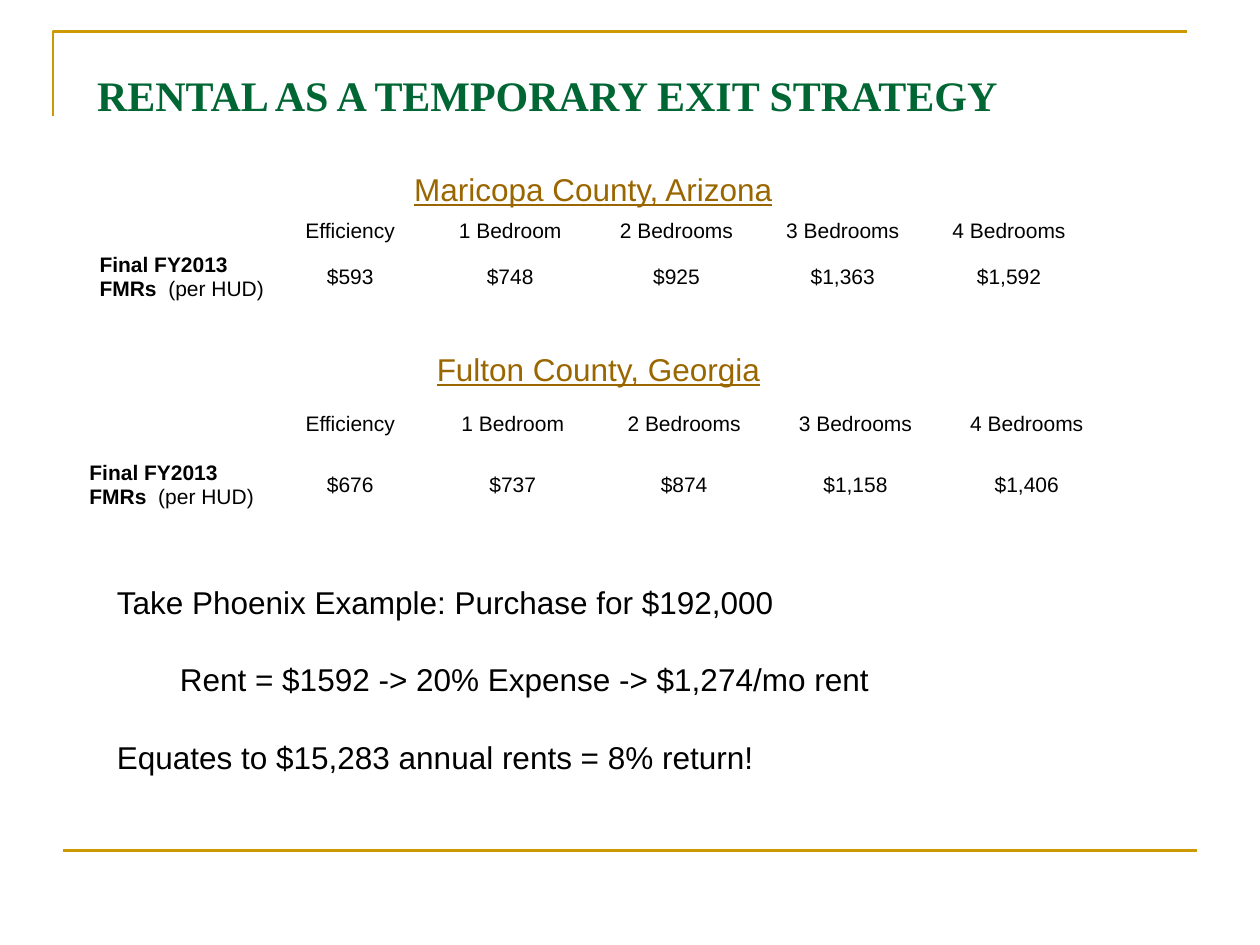
from lxml import etree
from pptx import Presentation
from pptx.dml.color import RGBColor
from pptx.enum import shapes, text
from pptx.oxml.ns import qn
from pptx.util import Inches, Pt

GOLD = RGBColor(0xCC, 0x99, 0x00)
BROWN = RGBColor(0x99, 0x66, 0x00)
GREEN = RGBColor(0x00, 0x66, 0x33)
BLACK = RGBColor(0, 0, 0)
WHITE = RGBColor(255, 255, 255)

HEAD = dict(name="Arial", size=Pt(18), underline=True)
SMALL = dict(name="Arial", size=Pt(12), bold=False)
BODY = dict(name="Arial", size=Pt(18))
TITLE = dict(name="Times New Roman", size=Pt(24), bold=True)

SIZES = ["Efficiency", "1 Bedroom", "2 Bedrooms", "3 Bedrooms", "4 Bedrooms"]
LABEL = [("Final FY2013 FMRs ", True), (" (per HUD)", False)]


def set_all(item, values):
    for key, value in values.items():
        setattr(item, key, value)


def add_run(para, words, style, color=BLACK):
    run = para.add_run()
    run.text = words
    set_all(run.font, style)
    run.font.color.rgb = color


def style_line(shape):
    shape.line.color.rgb = GOLD
    shape.line.width = Pt(1.5)


def add_frame(slide):
    """Draw the corner at the top left and the rule at the foot."""
    pen = slide.shapes.build_freeform(Inches(0.42), Inches(0.92))
    pen.add_line_segments([(Inches(0.42), Inches(0.25)),
                           (Inches(9.42), Inches(0.25))], close=False)
    corner = pen.convert_to_shape()
    corner.fill.background()
    corner.shadow.inherit = False
    style_line(corner)

    rule = slide.shapes.add_connector(
        shapes.MSO_CONNECTOR.STRAIGHT,
        Inches(0.5), Inches(6.75), Inches(9.5), Inches(6.75))
    style_line(rule)
    etree.SubElement(rule._element.spPr, qn("a:effectLst"))


def add_title(slide, words):
    title = slide.shapes.title
    set_all(title, dict(left=Inches(0.67), top=Inches(0.5),
                        width=Inches(8.5), height=Inches(0.83)))
    frame = title.text_frame
    frame.vertical_anchor = text.MSO_ANCHOR.TOP
    para = frame.paragraphs[0]
    para.alignment = text.PP_ALIGN.LEFT
    add_run(para, words, TITLE, GREEN)


def add_rents(slide, county, rents, left, top, cols, rows):
    """Add a county's table: a merged heading, unit sizes and rents."""
    table = slide.shapes.add_table(
        len(rows), len(cols), Inches(left), Inches(top),
        Inches(sum(cols)), Inches(sum(rows))).table
    table.first_row = table.horz_banding = False
    for col, width in zip(table.columns, cols):
        col.width = Inches(width)
    for row, height in zip(table.rows, rows):
        row.height = Inches(height)
    pad = Inches(0.04)
    for cell in table.iter_cells():
        set_all(cell, dict(margin_left=pad, margin_right=pad,
                           margin_top=pad, margin_bottom=pad,
                           vertical_anchor=text.MSO_ANCHOR.MIDDLE))
        cell.fill.solid()
        cell.fill.fore_color.rgb = WHITE
        cell.text_frame.paragraphs[0].alignment = text.PP_ALIGN.CENTER

    def para_at(row, col):
        return table.cell(row, col).text_frame.paragraphs[0]

    table.cell(0, 0).merge(table.cell(0, len(cols) - 1))
    add_run(para_at(0, 0), county, HEAD, BROWN)
    # keeps the blank corner cell from stretching its row
    etree.SubElement(para_at(1, 0)._p, qn("a:endParaRPr"), sz="1200")
    for col, (size, rent) in enumerate(zip(SIZES, rents), 1):
        add_run(para_at(1, col), size, SMALL)
        add_run(para_at(2, col), rent, SMALL)
    label = para_at(2, 0)
    label.alignment = text.PP_ALIGN.LEFT
    for words, bold in LABEL:
        add_run(label, words, {**SMALL, "bold": bold})


def add_body(slide, lines):
    box = slide.shapes.add_textbox(Inches(0.83), Inches(4.58),
                                   Inches(7.67), Inches(1.62))
    frame = box.text_frame
    frame.word_wrap = True
    for i, words in enumerate(lines):
        para = frame.add_paragraph() if i else frame.paragraphs[0]
        if i:
            para.space_before = Pt(22.5)
        add_run(para, words, BODY)


def main():
    deck = Presentation()
    deck.slide_width, deck.slide_height = Inches(10), Inches(7.5)
    slide = deck.slides.add_slide(deck.slide_layouts[5])
    add_frame(slide)
    add_title(slide, "RENTAL AS A TEMPORARY EXIT STRATEGY")
    add_rents(slide, "Maricopa County, Arizona",
              ["$593", "$748", "$925", "$1,363", "$1,592"],
              0.75, 1.33, [1.42, 1.22] + [1.32] * 4, [0.36, 0.27, 0.45])
    add_body(slide, ["Take Phoenix Example: Purchase for $192,000",
                     "\tRent = $1592 -> 20% Expense -> $1,274/mo rent",
                     "Equates to $15,283 annual rents = 8% return!"])
    add_rents(slide, "Fulton County, Georgia",
              ["$676", "$737", "$874", "$1,158", "$1,406"],
              0.67, 2.75, [1.5, 1.22] + [1.36] * 4, [0.37, 0.48, 0.46])
    deck.save("out.pptx")


if __name__ == "__main__":
    main()
